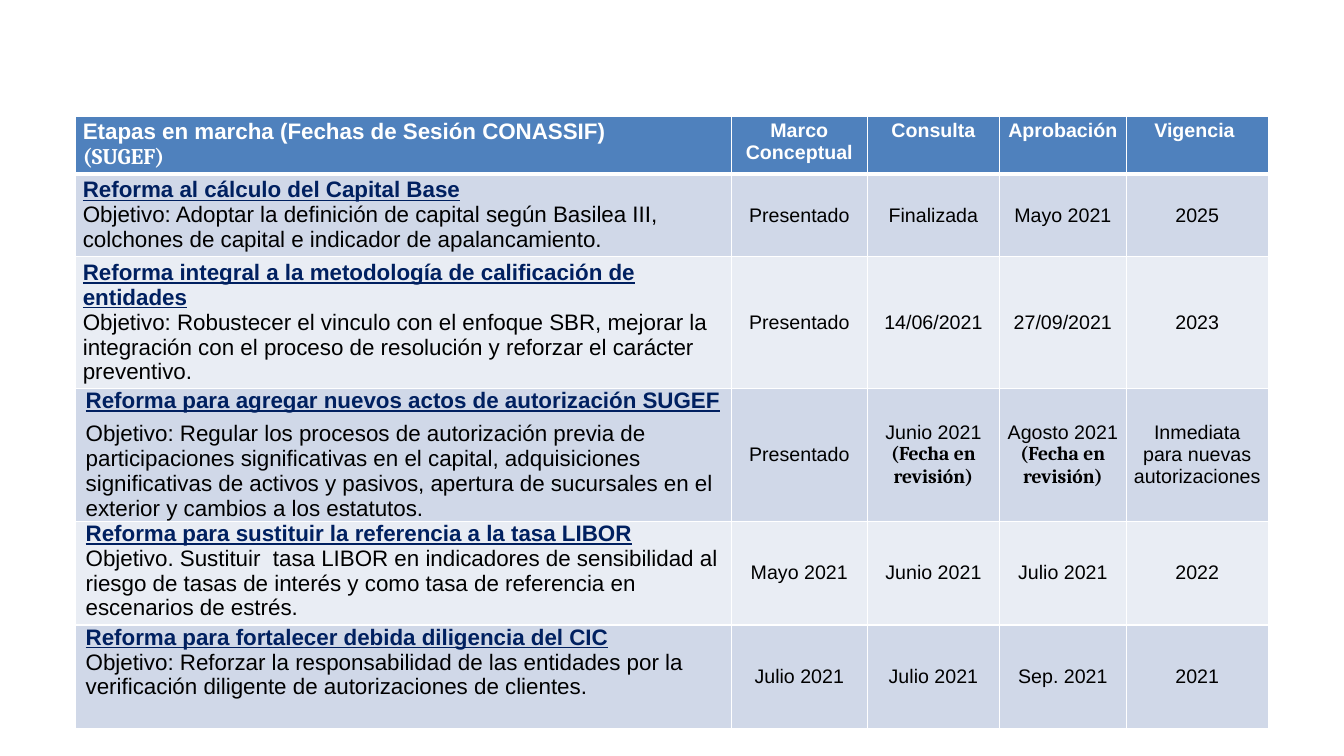
from pptx import Presentation
from pptx import util as u
from pptx.dml.color import RGBColor
from pptx.enum import text
from pptx.oxml.ns import qn
from lxml import etree

Pt = u.Pt
WHITE = RGBColor(0xFF, 0xFF, 0xFF)
BLACK = RGBColor(0, 0, 0)
NAVY = RGBColor(0x00, 0x20, 0x60)
BLUE = RGBColor(0x4F, 0x81, 0xBD)
BANDS = RGBColor(0xD0, 0xD8, 0xE8), RGBColor(0xE9, 0xED, 0xF4)

WIDTHS = 468.5, 97.2, 94.5, 90.5, 101.5
HEIGHTS = 40.3, 59, 84.2, 85.7, 74.2, 74.2
REVIEW = "(Fecha en revisión)"

HEADS = [["Marco", "Conceptual"], ["Consulta"], ["Aprobación"], ["Vigencia "]]

# Title, goal, the four stages, side indent, space after
REFORMS = [
    ("Reforma al cálculo del Capital Base",
     "Objetivo: Adoptar la definición de capital según Basilea III, colchones de "
     "capital e indicador de apalancamiento.",
     ["Presentado", "Finalizada", "Mayo 2021", "2025"], 0, 0),
    ("Reforma integral a la metodología de calificación de entidades",
     "Objetivo: Robustecer el vinculo con el enfoque SBR, mejorar la integración con "
     "el proceso de resolución y reforzar el carácter preventivo.",
     ["Presentado", "14/06/2021", "27/09/2021", "2023"], 0, 0),
    ("Reforma para agregar nuevos actos de autorización SUGEF",
     "Objetivo: Regular los procesos de autorización previa de participaciones "
     "significativas en el capital, adquisiciones significativas de activos y pasivos, "
     "apertura de sucursales en el exterior y cambios a los estatutos.",
     ["Presentado", "Junio 2021\n" + REVIEW, "Agosto 2021\n" + REVIEW,
      "Inmediata para nuevas autorizaciones"], 7.2, 6),
    ("Reforma para sustituir la referencia a la tasa LIBOR",
     "Objetivo. Sustituir  tasa LIBOR en indicadores de sensibilidad al riesgo de "
     "tasas de interés y como tasa de referencia en escenarios de estrés.",
     ["Mayo 2021", "Junio 2021", "Julio 2021", "2022"], 7.2, 0),
    ("Reforma para fortalecer debida diligencia del CIC",
     "Objetivo: Reforzar la responsabilidad de las entidades por la verificación "
     "diligente de autorizaciones de clientes.",
     ["Julio 2021", "Julio 2021", "Sep. 2021", "2021"], 7.2, 0),
]


def style(cell, fill, top=1, foot=1, inset=True):
    """Set the borders, fill and margins of a cell."""
    props = cell._tc.get_or_add_tcPr()
    for side, width in zip("LRTB", (1, 1, top, foot)):
        line = etree.SubElement(props, qn("a:ln" + side), w=str(Pt(width)))
        solid = etree.SubElement(line, qn("a:solidFill"))
        etree.SubElement(solid, qn("a:srgbClr"), val=str(WHITE))
    cell.fill.solid()
    cell.fill.fore_color.rgb = fill
    cell.margin_left = cell.margin_right = Pt(7.2 * 0.72 if inset else 0)
    cell.margin_top = cell.margin_bottom = Pt(2.6 if inset else 0)


def write(cell, lines, center=False, indent=0, after=0):
    """Fill a cell with lines of (words, size, colour, bold, underline, font)."""
    frame = cell.text_frame
    for i, (words, size, color, bold, under, face) in enumerate(lines):
        para = frame.add_paragraph() if i else frame.paragraphs[0]
        if center:
            para.alignment = text.PP_ALIGN.CENTER
        if indent:
            para._p.get_or_add_pPr().set("marL", str(Pt(indent)))
        if after:
            para.space_after = Pt(after)
        run = para.add_run()
        run.text = words
        font = run.font
        font.name, font.size, font.bold = face, Pt(size), bold
        font.underline = under
        font.color.rgb = color


def header(cells):
    for cell in cells:
        style(cell, BLUE, foot=3)
    write(cells[0], [
        ("Etapas en marcha (Fechas de Sesión CONASSIF)", 16, WHITE, True, False, "Arial"),
        ("(SUGEF)", 16, WHITE, True, False, "Cambria")])
    for cell, words in zip(cells[1:], HEADS):
        write(cell, [(word, 14, WHITE, True, False, "Arial") for word in words], center=True)


def reform(cells, row, fill, top):
    title, goal, stages, indent, after = row
    # Name and goal
    style(cells[0], fill, top, inset=not indent)
    write(cells[0], [(title, 16, NAVY, True, True, "Arial"),
                     (goal, 16, BLACK, False, False, "Arial")],
          indent=indent, after=after)
    # Stages
    for cell, stage in zip(cells[1:], stages):
        style(cell, fill, top)
        cell.vertical_anchor = text.MSO_ANCHOR.MIDDLE
        write(cell, [(line, 14, BLACK, line == REVIEW, False,
                      "Cambria" if line == REVIEW else "Arial")
                     for line in stage.split("\n")], center=True)


def plan(slide, left, top, width, height):
    """Place the table of reforms in the given box."""
    frame = slide.shapes.add_table(len(HEIGHTS), len(WIDTHS),
                                   Pt(left), Pt(top), Pt(width), Pt(height))
    table = frame.table
    table.horz_banding = False
    for col, size in zip(table.columns, WIDTHS):
        col.width = Pt(size * width / sum(WIDTHS))
    for row, size in zip(table.rows, HEIGHTS):
        row.height = Pt(size * height / sum(HEIGHTS))
    rows = [list(row.cells) for row in table.rows]
    header(rows[0])
    for i, (cells, row) in enumerate(zip(rows[1:], REFORMS)):
        reform(cells, row, BANDS[i % 2], 1 if i else 3)


def main():
    deck = Presentation()
    deck.slide_width, deck.slide_height = Pt(960), Pt(540)
    slide = deck.slides.add_slide(deck.slide_layouts[6])
    plan(slide, 54, 83, 852, 417.6)
    deck.save("out.pptx")


if __name__ == "__main__":
    main()
